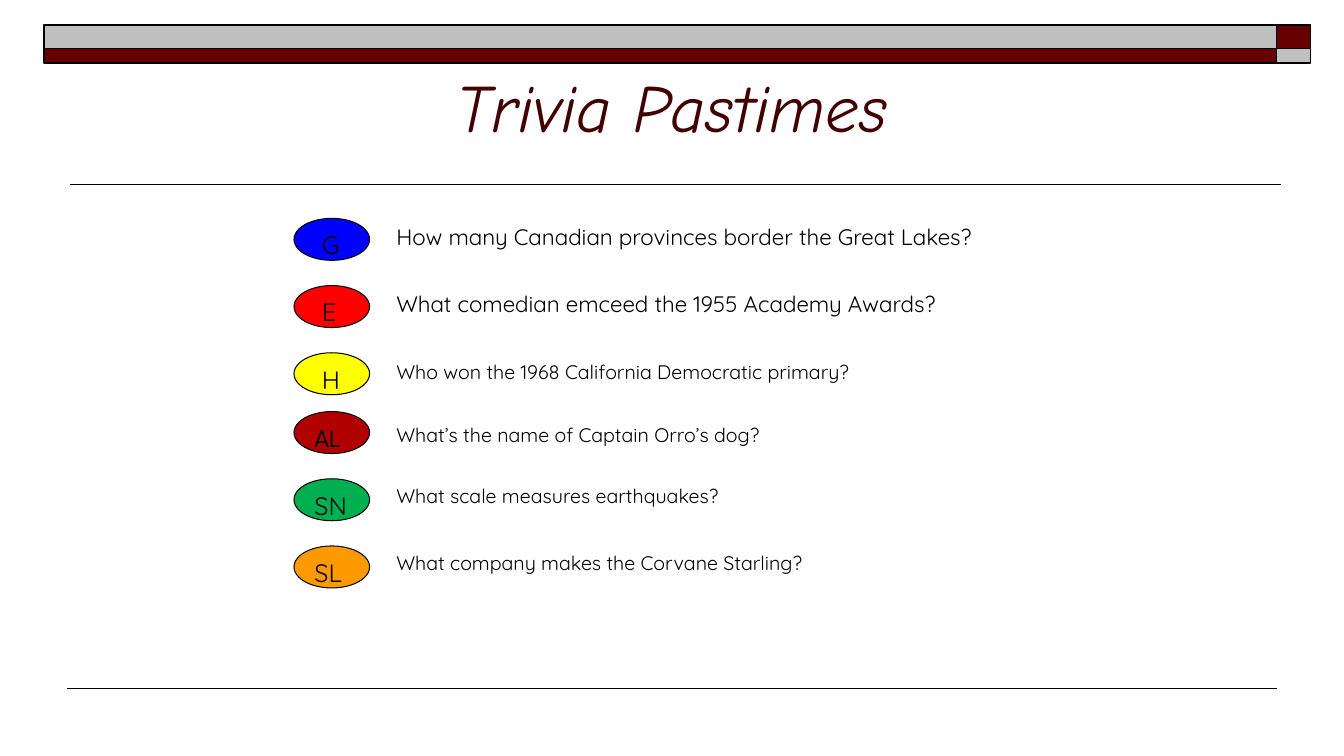
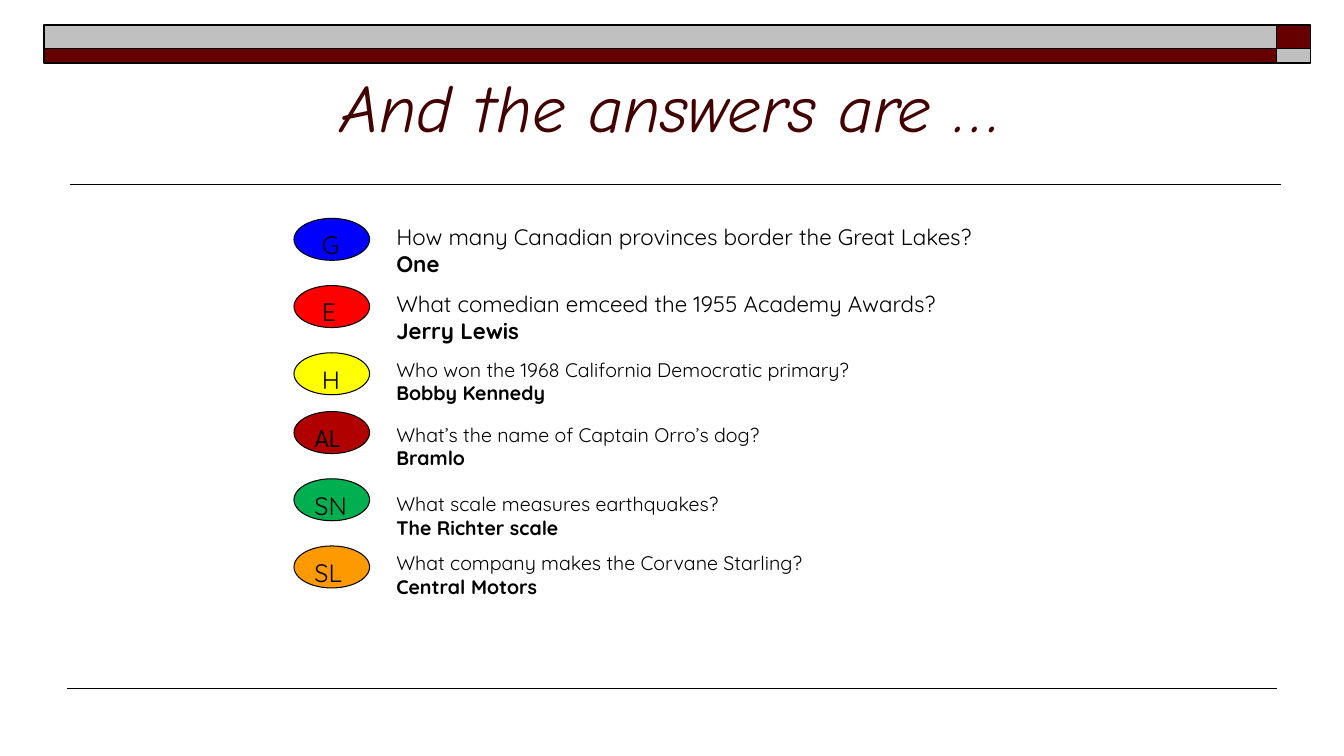
from dataclasses import dataclass

import pptx
import pptx.dml.color
import pptx.enum.shapes
import pptx.enum.text
import pptx.oxml.ns
import pptx.util
from lxml import etree

RGBColor = pptx.dml.color.RGBColor
MSO_SHAPE = pptx.enum.shapes.MSO_SHAPE
PP_ALIGN = pptx.enum.text.PP_ALIGN
MSO_ANCHOR = pptx.enum.text.MSO_ANCHOR

# Shared look
EMU_PER_PX = 9525
BLACK = RGBColor(0x00, 0x00, 0x00)
MAROON = RGBColor(0x66, 0x00, 0x00)
SILVER = RGBColor(0xC0, 0xC0, 0xC0)
TITLE_COLOR = RGBColor(0x42, 0x00, 0x00)
TITLE_FONT = "Comic Neue"
BODY_FONT = "Quicksand"

# Column positions of the quiz
OVAL_LEFT, OVAL_W, OVAL_H = 280, 72, 40
TEXT_LEFT, TEXT_W = 368, 690
INSET = 9


@dataclass(frozen=True)
class Band:
    left: int
    top: int
    width: int
    height: int
    color: RGBColor


@dataclass(frozen=True)
class Rule:
    left: int
    right: int
    y: int
    weight: float


@dataclass(frozen=True)
class Question:
    label: str
    color: RGBColor
    oval_top: int
    question_top: int
    answered_top: int
    size: int
    question: str
    answer: str
    label_indent: int = 0
    label_font: str = BODY_FONT


BANDS = (
    Band(1216, 24, 32, 22, MAROON),
    Band(42, 24, 1174, 22, SILVER),
    Band(42, 46, 1174, 14, MAROON),
    Band(1216, 46, 32, 14, SILVER),
)
RULES = (Rule(67, 1220, 176, 1), Rule(64, 1216, 656, 0.75))

QUESTIONS = (
    Question("G", RGBColor(0x00, 0x00, 0xFF), 208, 208, 208, 16,
             "How many Canadian provinces border the Great Lakes?", "One", 7),
    Question("E", RGBColor(0xFF, 0x00, 0x00), 272, 272, 272, 16,
             "What comedian emceed the 1955 Academy Awards?", "Jerry Lewis", 7),
    Question("H", RGBColor(0xFF, 0xFF, 0x00), 336, 338, 336, 14,
             "Who won the 1968 California Democratic primary?", "Bobby Kennedy", 7),
    Question("AL", RGBColor(0xB1, 0x00, 0x00), 392, 398, 398, 14,
             "What’s the name of Captain Orro’s dog?", "Bramlo",
             label_font="League Spartan"),
    Question("SN", RGBColor(0x00, 0xB0, 0x50), 456, 456, 464, 14,
             "What scale measures earthquakes?", "The Richter scale"),
    Question("SL", RGBColor(0xFF, 0x99, 0x00), 520, 520, 520, 14,
             "What company makes the Corvane Starling?", "Central Motors"),
)


def px(n: int) -> pptx.util.Emu:
    return pptx.util.Emu(n * EMU_PER_PX)


def add_run(p, text: str, size: int, font: str = BODY_FONT,
            color: RGBColor = BLACK, bold: bool = False,
            italic: bool = False) -> None:
    r = p.add_run()
    r.text = text
    r.font.name = font
    r.font.size = pptx.util.Pt(size)
    r.font.color.rgb = color
    r.font.bold = bold
    r.font.italic = italic


def add_outlined(s, kind, left: int, top: int, width: int, height: int,
                 fill: RGBColor, weight: float):
    sp = s.shapes.add_shape(kind, px(left), px(top), px(width), px(height))
    sp.shadow.inherit = False
    sp.fill.solid()
    sp.fill.fore_color.rgb = fill
    sp.line.color.rgb = BLACK
    sp.line.width = pptx.util.Pt(weight)
    return sp


def add_rule(s, rule: Rule) -> None:
    line = s.shapes.add_connector(
        pptx.enum.shapes.MSO_CONNECTOR.STRAIGHT,
        px(rule.left), px(rule.y), px(rule.right), px(rule.y))
    line.line.color.rgb = BLACK
    line.line.width = pptx.util.Pt(rule.weight)
    etree.SubElement(line._element.spPr, pptx.oxml.ns.qn("a:effectLst"))


def add_text_box(s, left: int, top: int, width: int, height: int):
    tf = s.shapes.add_textbox(px(left), px(top), px(width), px(height)).text_frame
    tf.word_wrap = True
    return tf


def add_frame(s, title: str) -> None:
    # Header bands, rules and title
    for b in BANDS:
        add_outlined(s, MSO_SHAPE.RECTANGLE, b.left, b.top, b.width, b.height,
                     b.color, 1)
    for rule in RULES:
        add_rule(s, rule)
    tf = add_text_box(s, 208, 24, 864, 120)
    tf.vertical_anchor = MSO_ANCHOR.BOTTOM
    p = tf.paragraphs[0]
    p.alignment = PP_ALIGN.CENTER
    add_run(p, title, 48, TITLE_FONT, TITLE_COLOR, italic=True)


def add_question(s, q: Question, answered: bool) -> None:
    # Category oval
    sp = add_outlined(s, MSO_SHAPE.OVAL, OVAL_LEFT, q.oval_top, OVAL_W, OVAL_H,
                      q.color, 0.75)
    tf = sp.text_frame
    tf.word_wrap = True
    tf.vertical_anchor = MSO_ANCHOR.TOP
    tf.margin_left = px(INSET + q.label_indent)
    p = tf.paragraphs[0]
    p.alignment = PP_ALIGN.LEFT
    add_run(p, q.label, 18, q.label_font)

    # Question, with its answer below
    top, height = (q.answered_top, 58) if answered else (q.question_top, 34)
    tf = add_text_box(s, TEXT_LEFT, top, TEXT_W, height)
    tf.auto_size = pptx.enum.text.MSO_AUTO_SIZE.SHAPE_TO_FIT_TEXT
    add_run(tf.paragraphs[0], q.question, q.size)
    if answered:
        add_run(tf.add_paragraph(), q.answer, q.size, bold=True)


def add_quiz_slide(prs, title: str, answered: bool) -> None:
    s = prs.slides.add_slide(prs.slide_layouts[6])
    add_frame(s, title)
    for q in QUESTIONS:
        add_question(s, q, answered)


def main() -> None:
    prs = pptx.Presentation()
    prs.slide_width, prs.slide_height = px(1280), px(720)
    add_quiz_slide(prs, "Trivia Pastimes", answered=False)
    add_quiz_slide(prs, "And the answers are …", answered=True)
    prs.save("out.pptx")


if __name__ == "__main__":
    main()
